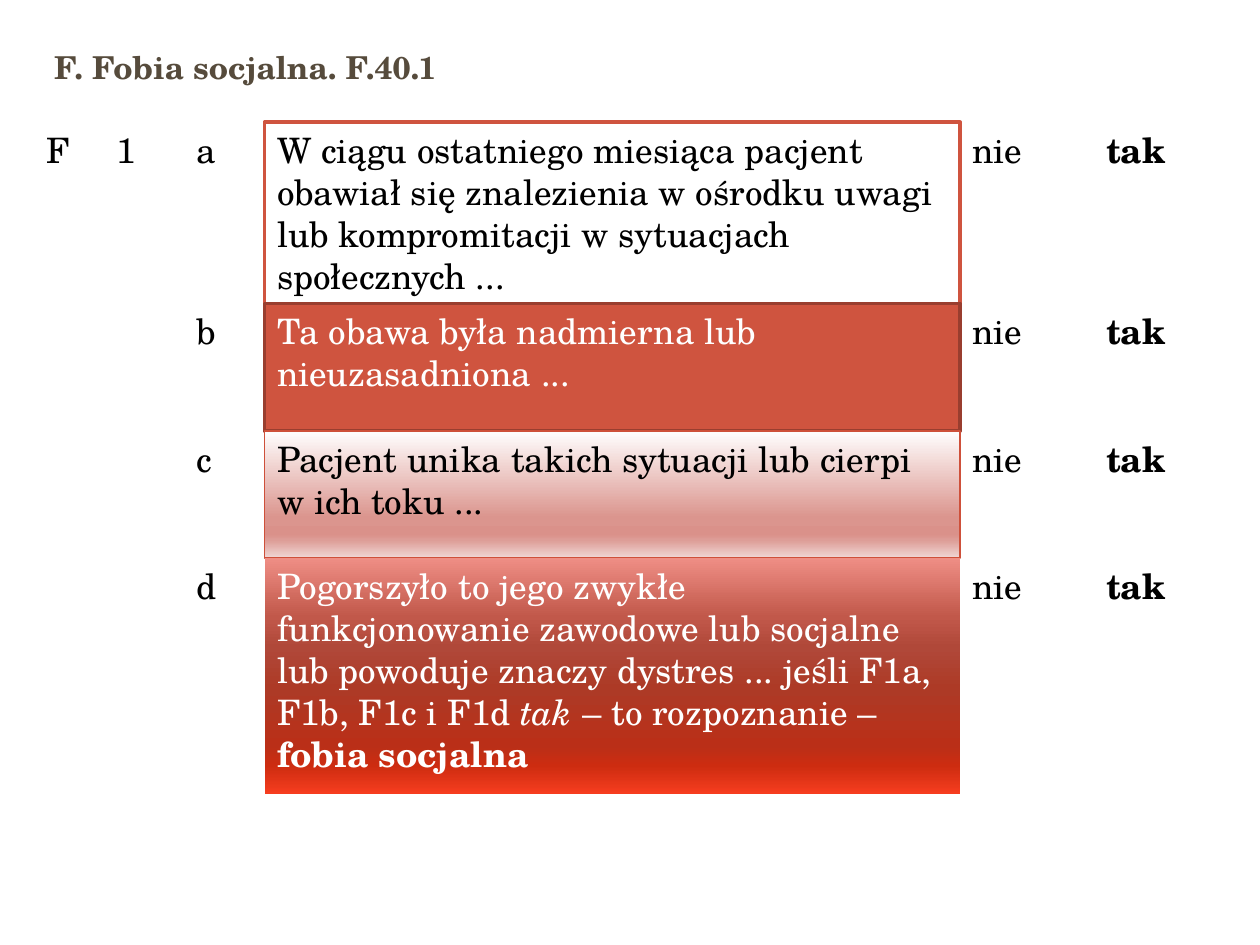
import pptx
import pptx.util
from lxml import etree
from pptx.dml.color import RGBColor
from pptx.enum.shapes import MSO_SHAPE
from pptx.enum.text import MSO_ANCHOR, MSO_AUTO_SIZE, PP_ALIGN
from pptx.oxml.ns import qn
from pptx.util import Inches

FONT = "TeX Gyre Schola"
BROWN = RGBColor(0x56, 0x4B, 0x3C)
BLACK = RGBColor(0, 0, 0)
WHITE = RGBColor(0xFF, 0xFF, 0xFF)
RED = RGBColor(0xCF, 0x54, 0x3F)
DARK_RED = RGBColor(0x99, 0x3E, 0x2F)
EDGE_RED = RGBColor(0xCE, 0x50, 0x3A)

# Gradients as (position in percent, colour), top to bottom
PALE_GRADIENT = [
    (0, RGBColor(0xFF, 0xFE, 0xFE)), (68, RGBColor(0xDB, 0x95, 0x8E)),
    (81, RGBColor(0xDA, 0x91, 0x8A)), (86, RGBColor(0xDD, 0x9D, 0x97)),
    (100, RGBColor(0xF0, 0xD7, 0xD5)),
]
DEEP_GRADIENT = [
    (0, RGBColor(0xEF, 0x8E, 0x85)), (25, RGBColor(0xC1, 0x58, 0x4A)),
    (38, RGBColor(0xB0, 0x48, 0x39)), (55, RGBColor(0xAD, 0x3A, 0x26)),
    (80, RGBColor(0xBA, 0x2F, 0x18)), (88, RGBColor(0xCD, 0x2C, 0x10)),
    (100, RGBColor(0xF6, 0x3D, 0x1F)),
]

# Content: runs are (text, style), with style "", "b" or "i"
TITLE = "F. Fobia socjalna. F.40.1"
SECTION, NUMBER = "F", "1"
QUESTIONS = [
    dict(letter="a", height=1.44, fill=WHITE, line=(RED, 2), color=BLACK,
         runs=[("W ciągu ostatniego miesiąca pacjent obawiał się znalezienia w "
                "ośrodku uwagi lub kompromitacji w sytuacjach społecznych ...", "")]),
    dict(letter="b", height=1.01, fill=RED, line=(DARK_RED, 2), color=WHITE,
         runs=[("Ta obawa była nadmierna lub nieuzasadniona ...", "")]),
    dict(letter="c", height=1.01, fill=PALE_GRADIENT, line=(EDGE_RED, 0.75), color=BLACK,
         runs=[("Pacjent unika takich sytuacji lub cierpi w ich toku ...", "")]),
    dict(letter="d", height=1.87, fill=DEEP_GRADIENT, line=None, color=WHITE,
         runs=[("Pogorszyło to jego zwykłe funkcjonowanie zawodowe lub socjalne lub "
                "powoduje znaczy dystres ... jeśli F1a, F1b, F1c i F1d ", ""),
               ("tak", "i"), (" – to rozpoznanie – ", ""), ("fobia socjalna", "b")]),
]

# Columns as (left, width)
COLUMNS = dict(section=(0.27, 0.56), number=(0.83, 0.64), letter=(1.46, 0.64),
               question=(2.1, 5.52), no=(7.62, 1.06), yes=(8.68, 1.06))
GRID_TOP = 0.97


def write(shape, runs, size, color):
    frame = shape.text_frame
    frame.word_wrap = True
    frame.auto_size = MSO_AUTO_SIZE.NONE
    frame.vertical_anchor = MSO_ANCHOR.TOP
    paragraph = frame.paragraphs[0]
    paragraph.alignment = PP_ALIGN.LEFT
    for text, style in runs:
        run = paragraph.add_run()
        run.text = text
        run.font.name = FONT
        run.font.size = pptx.util.Pt(size)
        run.font.color.rgb = color
        run.font.bold = style == "b"
        run.font.italic = style == "i"


def fill_gradient(shape, stops):
    shape.fill.gradient()
    shape.fill.gradient_angle = 270
    stop_list = shape.fill._xPr.find(".//" + qn("a:gsLst"))
    for old_stop in list(stop_list):
        stop_list.remove(old_stop)
    for position, color in stops:
        stop = etree.SubElement(stop_list, qn("a:gs"), pos=str(position * 1000))
        etree.SubElement(stop, qn("a:srgbClr"), val=str(color))


def add_label(shapes, column, top, height, text, style=""):
    left, width = COLUMNS[column]
    label = shapes.add_textbox(Inches(left), Inches(top), Inches(width), Inches(height))
    write(label, [(text, style)], 20, BLACK)


def add_question(shapes, top, question):
    left, width = COLUMNS["question"]
    box = shapes.add_shape(MSO_SHAPE.RECTANGLE, Inches(left), Inches(top),
                           Inches(width), Inches(question["height"]))
    box.shadow.inherit = False
    if isinstance(question["fill"], list):
        fill_gradient(box, question["fill"])
    else:
        box.fill.solid()
        box.fill.fore_color.rgb = question["fill"]
    if question["line"]:
        color, weight = question["line"]
        box.line.color.rgb = color
        box.line.width = pptx.util.Pt(weight)
    else:
        box.line.fill.background()
    write(box, question["runs"], 20, question["color"])


def main():
    deck = pptx.Presentation()
    deck.slide_width, deck.slide_height = Inches(10), Inches(7.5)
    slide = deck.slides.add_slide(deck.slide_layouts[5])

    # Title
    title = slide.shapes.title
    title.left, title.top = Inches(0.33), Inches(0.33)
    title.width, title.height = Inches(10), Inches(1.25)
    write(title, [(TITLE, "b")], 18, BROWN)

    # Questionnaire grid
    grid = slide.shapes.add_group_shape().shapes
    add_label(grid, "section", GRID_TOP, QUESTIONS[0]["height"], SECTION)
    add_label(grid, "number", GRID_TOP, QUESTIONS[0]["height"], NUMBER)
    top = GRID_TOP
    for question in QUESTIONS:
        height = question["height"]
        add_label(grid, "letter", top, height, question["letter"])
        add_question(grid, top, question)
        add_label(grid, "no", top, height, "nie")
        add_label(grid, "yes", top, height, "tak", "b")
        top += height

    deck.save("out.pptx")


if __name__ == "__main__":
    main()
